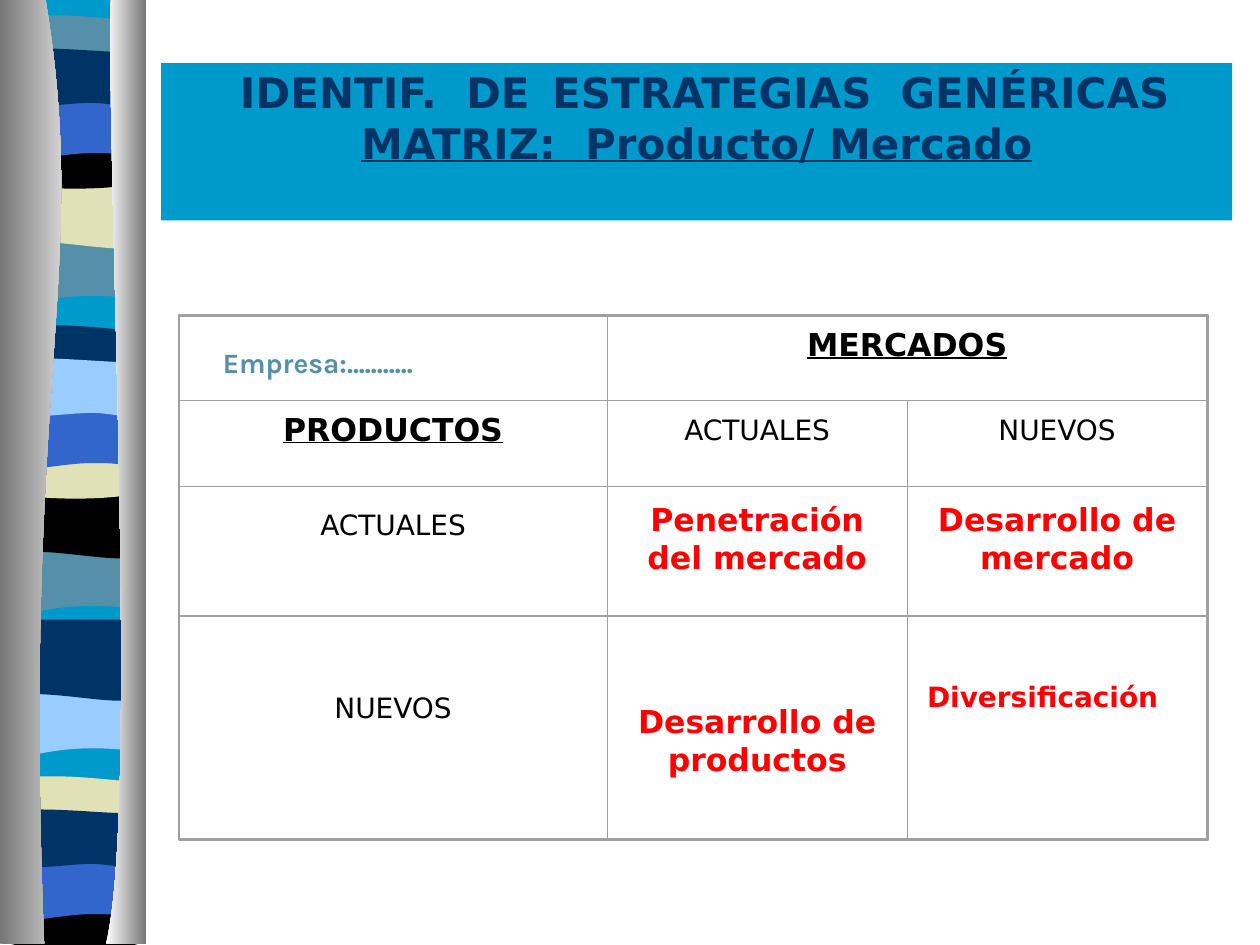
from dataclasses import dataclass

from lxml import etree
from pptx import Presentation
from pptx.dml.color import RGBColor
from pptx.enum import shapes, text
from pptx.oxml import ns
from pptx.util import Inches, Pt


@dataclass(frozen=True)
class Theme:
    """Colours, fonts and type sizes of the slide."""
    sky: str = "0099CC"
    navy: str = "003366"
    steel: str = "5490A8"
    sand: str = "E1E1B7"
    blue: str = "3366CC"
    pale: str = "99CCFF"
    black: str = "000000"
    red: str = "FF0000"
    border: str = "A0A0A0"
    metal: str = "767676"
    white: str = "FFFFFF"
    sans: str = "DejaVu Sans"
    serif: str = "Times New Roman"
    label: str = "Karla"
    title: int = 24
    heading: int = 18
    body: int = 16


THEME = Theme()

# Each motif: a start point, then line ends (2 numbers) or Bezier curves (6 numbers).
WAVE = [(1.13, 1.85), (1.13, 2.32), (0.39, 2.24, 0.24, 2.4, 0.05, 2.32), (0.05, 1.85)]
RIPPLE = [(1.13, 1.41), (1.13, 1.88), (0.96, 1.96, 0.39, 1.82, 0.05, 1.88), (0.05, 1.41)]
CAP = [(1.13, 0.21), (1.13, 0.45), (0.96, 0.5, 0.24, 0.5, 0.05, 0.45), (0.05, 0.21),
       (0.12, 0.16, 0.29, 0.17, 0.47, 0.17), (0.65, 0.17, 1, 0.2, 1.13, 0.21)]
SADDLE = [(1.13, 1.08), (1.13, 1.4), (0.96, 1.46, 0.24, 1.46, 0.05, 1.4), (0.05, 1.08),
          (0.72, 1.13, 0.91, 1.08, 1.13, 1.08)]
CREST = [(1.13, 0.74), (1.13, 1.21), (0.97, 1.16, 0.9, 1.16, 0.72, 1.16),
         (0.54, 1.16, 0.22, 1.21, 0.05, 1.21), (0.05, 0.74)]
SWELL = [(1.13, 0.46), (1.13, 0.77), (1.07, 0.82, 0.9, 0.77, 0.72, 0.77),
         (0.54, 0.77, 0.17, 0.82, 0.05, 0.77), (0.05, 0.46),
         (0.21, 0.41, 0.79, 0.46, 0.97, 0.46), (1.15, 0.46, 1.1, 0.46, 1.13, 0.46)]
MOTIFS = [WAVE, RIPPLE, CAP, SADDLE, CREST, SWELL]
BAND_STRETCH = 1.3

# Each set: shift of the first two motifs, shift of the others, colours.
BAND_SETS = [
    (0, 0, "steel sand steel black blue navy"),
    (2.46, 2.46, "steel black navy sand blue pale"),
    (3.59, 6.04, "pale navy sand black blue navy"),
]
LEFT_METAL = [(0.36, -0.01), (0.72, 2.16, 0.17, 2.96, 0.35, 7.49), (0, 7.49), (0, -0.01)]
RIGHT_METAL = [(0.88, -0.01), (0.84, 1.25, 1.11, 6.46, 0.84, 7.49), (1.16, 7.49), (1.16, 0)]

LEFTS = [1.42, 4.82, 7.2, 9.58]
TOPS = [2.51, 3.18, 3.86, 4.89, 6.66]


def colour(value):
    """Turn a hex string into a colour."""
    return RGBColor.from_string(value)


def add_outline(page, outline, shift=0, stretch=1):
    """Add a closed curved freeform, its path stretched about its middle."""
    points = [(Inches(part[i]), Inches(part[i + 1] + shift))
              for part in outline for i in range(0, len(part), 2)]
    builder = page.shapes.build_freeform(*points[0], scale=1.0)
    builder.add_line_segments(points[1:], close=True)
    shape = builder.convert_to_shape()
    shape.shadow.inherit = False
    shape.line.fill.background()
    route = shape._element.find(".//" + ns.qn("a:path"))
    for point in route.iter(ns.qn("a:pt")):
        middle = shape.height / 2
        point.set("y", str(round(middle + (int(point.get("y")) - middle) * stretch)))
    lines = iter(route.findall(ns.qn("a:lnTo")))
    for part in outline[1:]:
        group = [next(lines) for _ in range(len(part) // 2)]
        if len(group) == 3:
            curve = etree.SubElement(route, ns.qn("a:cubicBezTo"))
            group[0].addprevious(curve)
            for line in group:
                curve.append(line[0])
                route.remove(line)
    return shape


def add_box(page, left, top, width, height, fill=None, border=None):
    """Add a rectangle with an optional fill and border width."""
    box = page.shapes.add_shape(shapes.MSO_SHAPE.RECTANGLE, Inches(left), Inches(top),
                                Inches(width), Inches(height))
    box.shadow.inherit = False
    if fill is None:
        box.fill.background()
    else:
        box.fill.solid()
        box.fill.fore_color.rgb = colour(fill)
    if border is None:
        box.line.fill.background()
    else:
        box.line.color.rgb = colour(THEME.border)
        box.line.width = Pt(border)
    return box


def add_metal(page, outline, start, end):
    """Add a metal edge shaded from left to right."""
    shape = add_outline(page, outline)
    shape.fill.gradient()
    shape.fill.gradient_angle = 0
    for stop, value in zip(shape.fill.gradient_stops, (start, end)):
        stop.color.rgb = colour(value)


def add_ribbon(page):
    """Draw the wavy ribbon between its two metal edges."""
    add_box(page, 0.05, 0, 1.08, 7.48, THEME.sky)
    for low, high, names in BAND_SETS:
        for index, (motif, name) in enumerate(zip(MOTIFS, names.split())):
            band = add_outline(page, motif, low if index < 2 else high, BAND_STRETCH)
            band.fill.solid()
            band.fill.fore_color.rgb = colour(getattr(THEME, name))
    add_metal(page, LEFT_METAL, THEME.metal, THEME.white)
    add_metal(page, RIGHT_METAL, THEME.white, THEME.metal)


def style(span, size, fill, face=THEME.sans, bold=False, underline=False):
    """Format one run."""
    span.font.size = Pt(size)
    span.font.name = face
    span.font.bold = bold
    span.font.underline = underline
    span.font.color.rgb = colour(fill)


def add_title(page):
    """Add the title panel with its two lines."""
    frame = add_box(page, 1.28, 0.5, 8.5, 1.25, THEME.sky).text_frame
    frame.word_wrap = True
    frame.vertical_anchor = text.MSO_ANCHOR.TOP
    frame.margin_top = Inches(0.03)
    para = frame.paragraphs[0]
    para.alignment = text.PP_ALIGN.CENTER
    lines = [["  ", "IDENTIF.  DE ", " ", "ESTRATEGIAS  GENÉRICAS"],
             ["MATRIZ:  Producto/ Mercado"]]
    for number, pieces in enumerate(lines):
        if number:
            para.add_line_break()
        for piece in pieces:
            span = para.add_run()
            span.text = piece
            if piece.strip():
                style(span, THEME.title, THEME.navy, bold=True, underline=number == 1)
            else:
                style(span, THEME.heading, THEME.navy, THEME.serif)


def add_text(page, words, left, top, width, height, inset, centred=True, **look):
    """Add a wrapped text box whose text starts at an inset from its top."""
    box = page.shapes.add_textbox(Inches(left), Inches(top), Inches(width), Inches(height))
    frame = box.text_frame
    frame.word_wrap = True
    frame.margin_top, frame.margin_bottom = Inches(inset), 0
    frame.text = words
    para = frame.paragraphs[0]
    para.alignment = text.PP_ALIGN.CENTER if centred else text.PP_ALIGN.LEFT
    style(para.runs[0], **look)


def add_matrix(page):
    """Add the product and market matrix."""
    heading = dict(size=THEME.heading, fill=THEME.black, bold=True, underline=True)
    plain = dict(size=THEME.body, fill=THEME.black)
    strategy = dict(size=THEME.heading, fill=THEME.red, bold=True)
    last = dict(size=THEME.body, fill=THEME.red, bold=True, centred=False)
    entries = [
        (0, 0, 1, "", 0, {}),
        (0, 1, 2, "MERCADOS", 0.07, heading),
        (1, 0, 1, "PRODUCTOS", 0.07, heading),
        (1, 1, 1, "ACTUALES", 0.09, plain),
        (1, 2, 1, "NUEVOS", 0.09, plain),
        (2, 0, 1, "ACTUALES", 0.17, plain),
        (2, 1, 1, "Penetración del mercado", 0.11, strategy),
        (2, 2, 1, "Desarrollo de mercado", 0.11, strategy),
        (3, 0, 1, "NUEVOS", 0.91, plain),
        (3, 1, 1, "Desarrollo de productos", 0.76, strategy),
        (3, 2, 1, "Diversificación", 0.74, last),
    ]
    for row, column, across, words, inset, look in entries:
        left, top = LEFTS[column], TOPS[row]
        width, height = LEFTS[column + across] - left, TOPS[row + 1] - top
        if words:
            add_text(page, words, left + 0.06, top, width - 0.12, height, inset, **look)
        add_box(page, left, top, width, height, border=0)
    add_box(page, 1.42, 2.5, 8.17, 4.17, border=1.12)
    add_text(page, "Empresa:...........", 1.67, 2.67, 3.25, 0.37, 0.07, centred=False,
             size=THEME.body, fill=THEME.steel, face=THEME.label, bold=True)


def main():
    """Build and save the slide."""
    deck = Presentation()
    deck.slide_width, deck.slide_height = Inches(10), Inches(7.5)
    page = deck.slides.add_slide(deck.slide_layouts[6])
    add_ribbon(page)
    add_title(page)
    add_matrix(page)
    deck.save("out.pptx")


if __name__ == "__main__":
    main()
